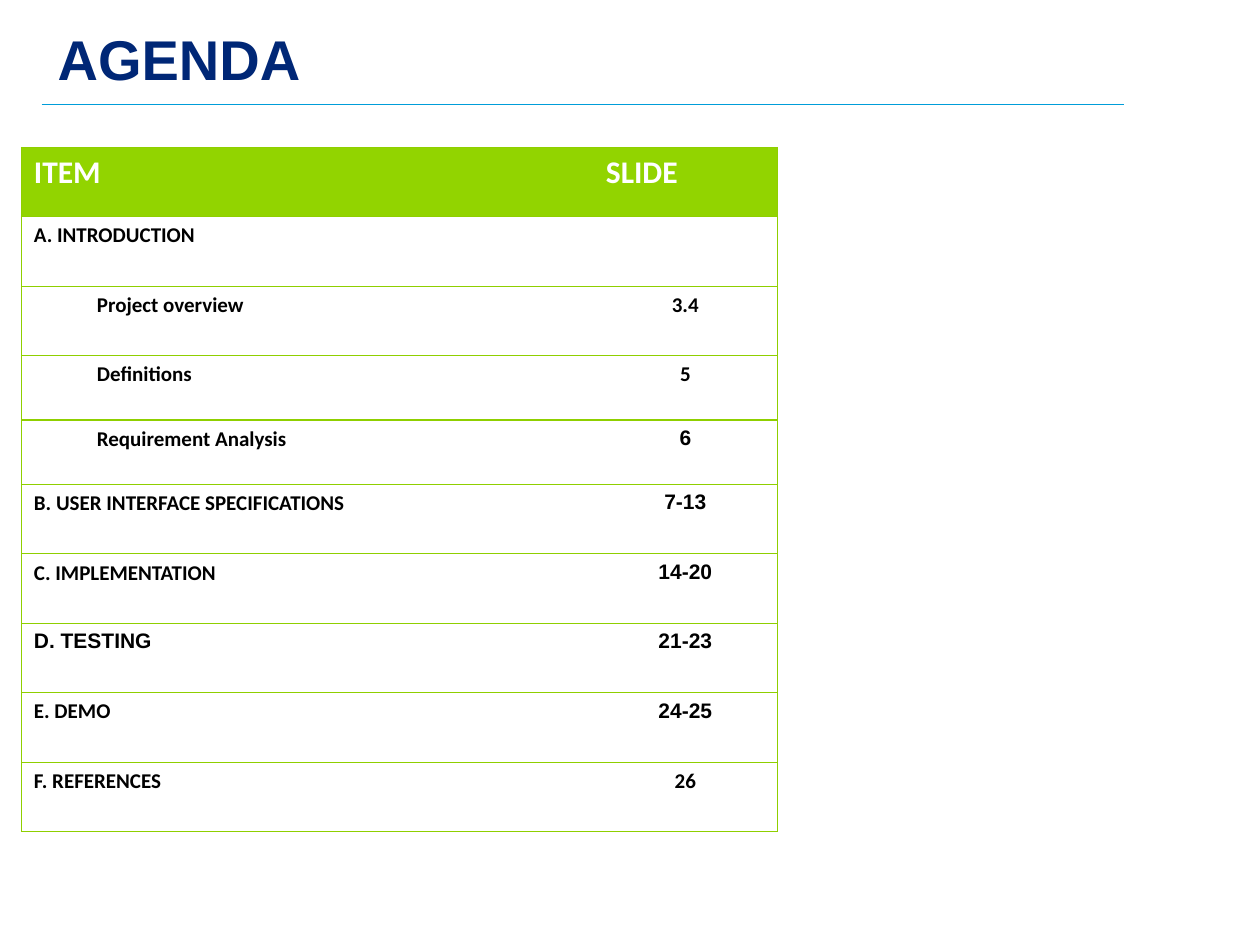
from dataclasses import dataclass

from pptx import Presentation
from pptx import util as u
from pptx.dml.color import RGBColor
from pptx.enum import shapes, text
from pptx.oxml import parse_xml
from pptx.oxml.ns import nsdecls, qn

GREEN, BLUE, NAVY = "8FCF00", "009DD9", "002776"
HEADER_FILL, WHITE, BLACK = "92D400", "FFFFFF", "000000"
SANS, ARIAL = "Calibri", "Arial"


@dataclass
class AgendaItem:
    name: str
    pages: str = ""
    indent: float = 0
    name_font: str = SANS
    pages_font: str = SANS
    height: float = 1.4


AGENDA = [
    AgendaItem("A. INTRODUCTION"),
    AgendaItem("Project overview", "3.4", indent=1.27),
    AgendaItem("Definitions", "5", indent=1.27, height=1.3),
    AgendaItem("Requirement Analysis", "6", indent=1.27, pages_font=ARIAL, height=1.3),
    AgendaItem("B. USER INTERFACE SPECIFICATIONS", "7-13", pages_font=ARIAL),
    AgendaItem("C. IMPLEMENTATION", "14-20", pages_font=ARIAL),
    AgendaItem("D. TESTING", "21-23", name_font=ARIAL, pages_font=ARIAL),
    AgendaItem("E. DEMO", "24-25", pages_font=ARIAL),
    AgendaItem("F. REFERENCES", "26"),
]


def rgb(value: str) -> RGBColor:
    return RGBColor.from_string(value)


def write(frame, words: str, *, size=12, font=SANS, color=BLACK,
          align=text.PP_ALIGN.LEFT, indent=0.0) -> None:
    """Put one bold, formatted paragraph in a text frame."""
    paragraph = frame.paragraphs[0]
    paragraph.alignment = align
    if indent:
        properties = paragraph._p.get_or_add_pPr()
        properties.set("marL", str(u.Cm(indent)))
        properties.set("indent", "0")
    run = paragraph.add_run()
    run.text = words
    run.font.size, run.font.name, run.font.bold = u.Pt(size), font, True
    run.font.color.rgb = rgb(color)


def format_cell(cell, fill: str, hidden_side: str) -> None:
    """Fill a cell and draw green borders on all sides but one."""
    cell.fill.solid()
    cell.fill.fore_color.rgb = rgb(fill)
    properties = cell._tc.get_or_add_tcPr()
    for place, side in enumerate("LRTB"):
        paint = ("<a:noFill/>" if side == hidden_side else
                 f'<a:solidFill><a:srgbClr val="{GREEN}"/></a:solidFill>')
        properties.insert(place, parse_xml(
            f'<a:ln{side} {nsdecls("a")} w="{u.Pt(0.75)}">{paint}</a:ln{side}>'))


def add_title(slide, words: str) -> None:
    title = slide.shapes.title
    title.left, title.top = u.Cm(-4.01), u.Cm(0)
    title.width, title.height = u.Cm(15.24), u.Cm(2.34)
    title.text_frame.vertical_anchor = text.MSO_ANCHOR.MIDDLE
    write(title.text_frame, words, size=32, font=ARIAL, color=NAVY,
          align=text.PP_ALIGN.CENTER)


def add_rule(slide) -> None:
    rule = slide.shapes.add_connector(
        shapes.MSO_CONNECTOR.STRAIGHT, u.Cm(0.84), u.Cm(2.11), u.Cm(22.66), u.Cm(2.11))
    rule.line.color.rgb = rgb(BLUE)
    rule.line.width = u.Pt(0.75)
    rule._element.spPr.append(rule._element.spPr.makeelement(qn("a:effectLst"), {}))


def add_agenda(slide, items: list[AgendaItem]) -> None:
    heights = [1.4] + [item.height for item in items]
    table = slide.shapes.add_table(
        len(heights), 2, u.Cm(0.43), u.Cm(2.97), u.Cm(15.24), u.Cm(sum(heights))).table
    table.horz_banding = False
    for column, width in zip(table.columns, (11.53, 3.71)):
        column.width = u.Cm(width)
    for index, (row, height) in enumerate(zip(table.rows, heights)):
        row.height = u.Cm(height)
        for cell, inner_side in zip(row.cells, "RL"):
            format_cell(cell, WHITE if index else HEADER_FILL, inner_side)

    for column, heading in enumerate(("ITEM", "SLIDE")):
        write(table.cell(0, column).text_frame, heading, size=18, color=WHITE)
    for index, item in enumerate(items, start=1):
        write(table.cell(index, 0).text_frame, item.name,
              font=item.name_font, indent=item.indent)
        if item.pages:
            write(table.cell(index, 1).text_frame, item.pages,
                  font=item.pages_font, align=text.PP_ALIGN.CENTER)


def main() -> None:
    deck = Presentation()
    deck.slide_width, deck.slide_height = u.Cm(25.4), u.Cm(19.05)
    slide = deck.slides.add_slide(deck.slide_layouts.get_by_name("Title Only"))
    add_title(slide, "AGENDA")
    add_agenda(slide, AGENDA)
    add_rule(slide)
    deck.save("out.pptx")


if __name__ == "__main__":
    main()
